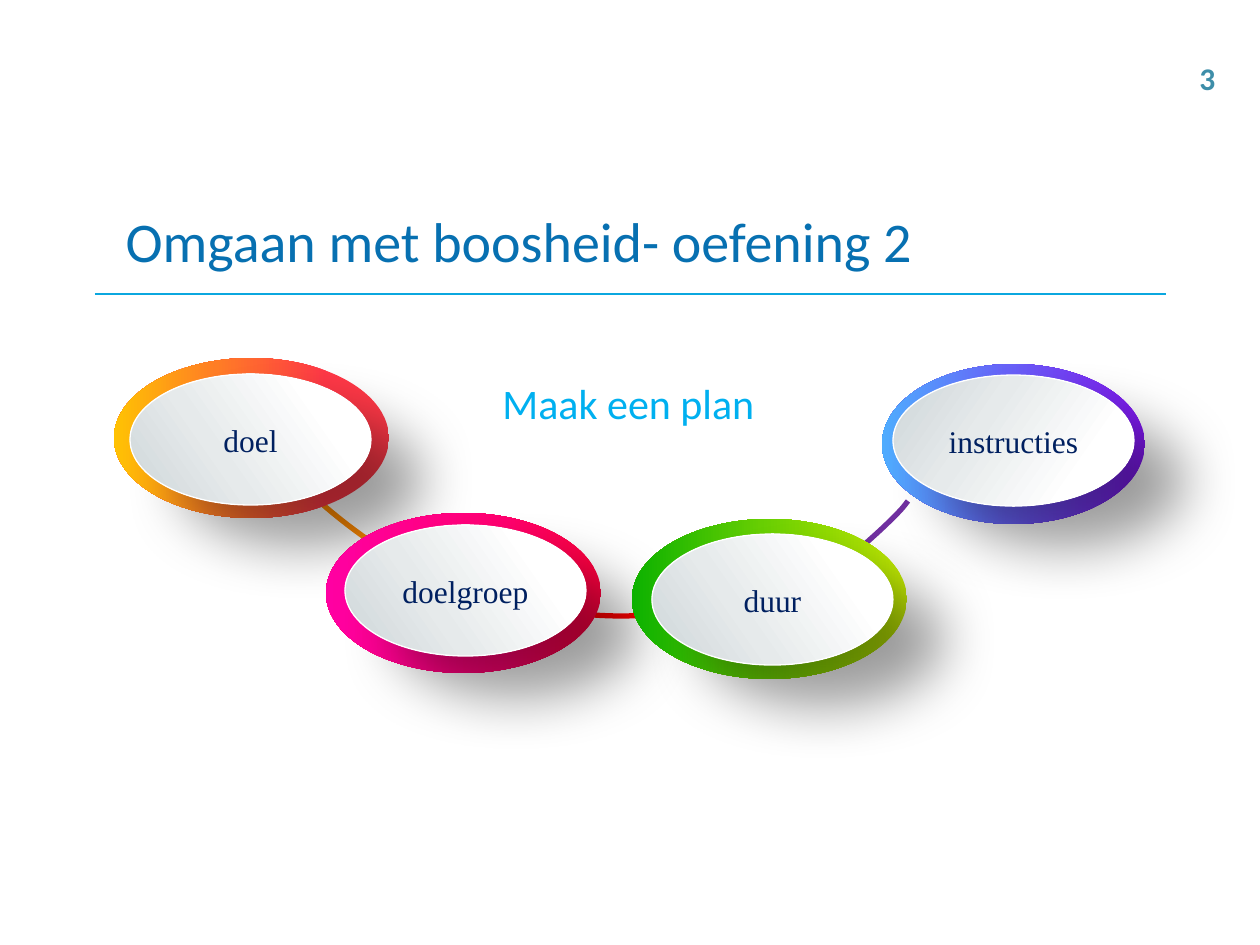
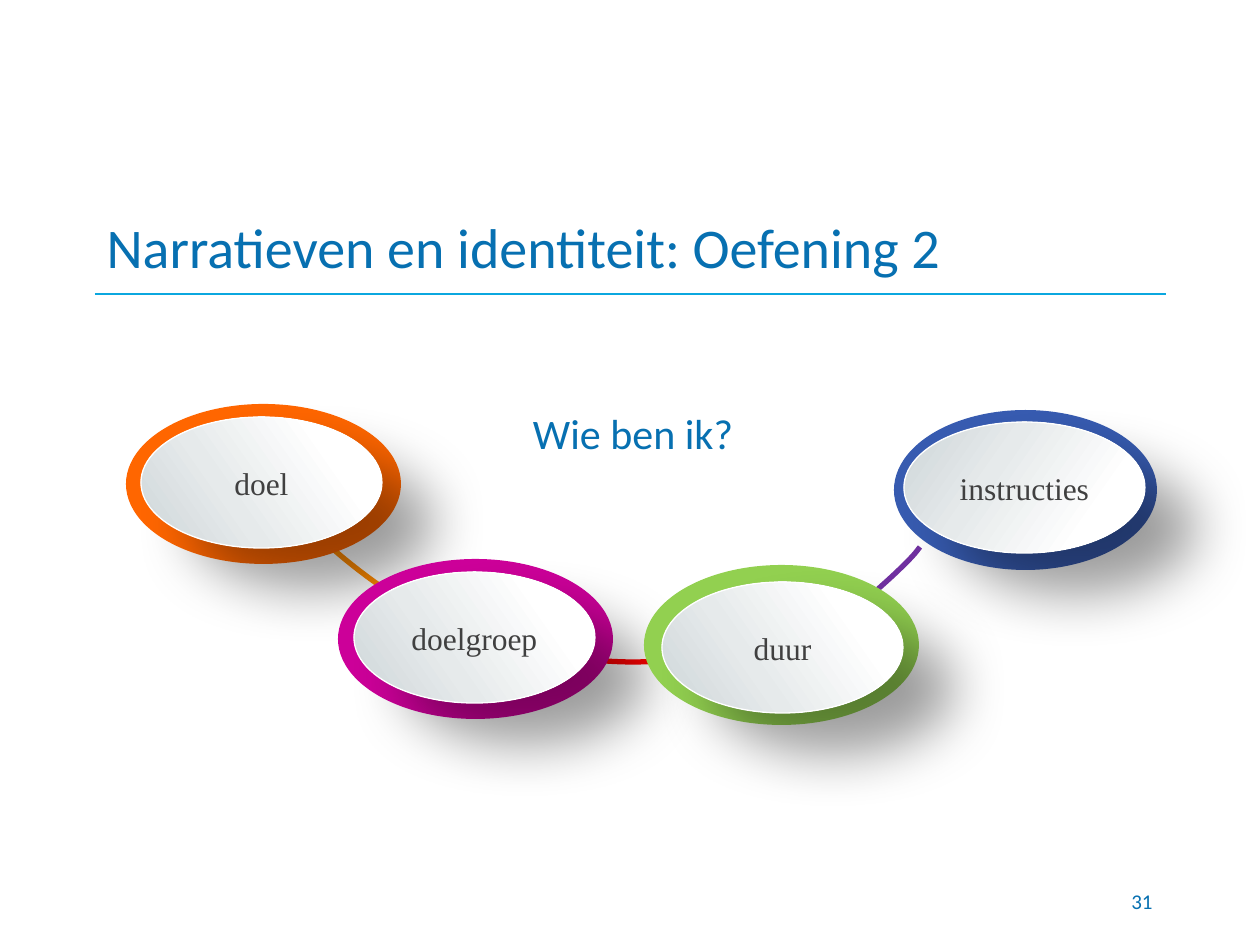
from pptx import Presentation
from pptx.dml.color import RGBColor
from pptx.enum.shapes import MSO_CONNECTOR, MSO_SHAPE
from pptx.enum.text import MSO_ANCHOR, MSO_AUTO_SIZE, PP_ALIGN
from pptx.oxml import parse_xml
from pptx.oxml.ns import nsdecls
from pptx.oxml.xmlchemy import OxmlElement
from pptx.util import Pt

EMU_PER_PX = 914400 / 126
SANS, SERIF = "Calibri", "Times New Roman"
BLUE, RULE_BLUE, SKY, TEAL = "0770B1", "0BA7DF", "00B0F0", "3E8EA9"
NAVY, GREY = "002060", "404040"
WHITE, BLACK = "FFFFFF", "000000"
PURPLE, RED, ORANGE = "7030A0", "FF0000", "FF8A00"

SILVER = [(0, "CDD5D8"), (37, "E6EAEB"), (77, WHITE), (100, WHITE)]
FACE_SIZE = (241, 131)
# label, ring box within the chain, gradient angle of the face
OVALS = [
    ("instructies", (768, 6, 263, 160), 35),
    ("doel", (0, 0, 275, 160), 325),
    ("doelgroep", (212, 155, 275, 160), 325),
    ("duur", (518, 161, 275, 160), 325),
]
# colour, start point and cubic segments within the chain
ARCS = [
    (PURPLE, [(794, 143), (789, 150), (784, 155), (779, 160),
              (763, 176), (745, 191), (729, 206),
              (705, 222), (681, 234), (656, 243)]),
    (RED, [(452, 254), (479, 258), (507, 259), (535, 257),
           (549, 256), (562, 254), (576, 253)]),
    (ORANGE, [(197, 136), (224, 161), (256, 185), (292, 206)]),
]


def px(length):
    return round(length * EMU_PER_PX)


def px_box(*lengths):
    return [px(length) for length in lengths]


def color(hex_string):
    return RGBColor.from_string(hex_string)


def style_text(text_frame, text, size, hex_color, font=SANS,
               align=PP_ALIGN.LEFT, bold=False):
    text_frame.text = text
    paragraph = text_frame.paragraphs[0]
    paragraph.alignment = align
    run_font = paragraph.runs[0].font
    run_font.name, run_font.size, run_font.bold = font, Pt(size), bold
    run_font.color.rgb = color(hex_color)
    return paragraph


def add_text(slide, box, text, size, hex_color, wrap=True, **style):
    text_frame = slide.shapes.add_textbox(*px_box(*box)).text_frame
    text_frame.word_wrap = wrap
    return text_frame, style_text(text_frame, text, size, hex_color, **style)


def fill_gradient(shape, stops, angle):
    stop_xml = "".join(
        f'<a:gs pos="{position * 1000}"><a:srgbClr val="{hex_color}"/></a:gs>'
        for position, hex_color in stops)
    gradient = parse_xml(
        f'<a:gradFill {nsdecls("a")} rotWithShape="1"><a:gsLst>{stop_xml}</a:gsLst>'
        f'<a:lin ang="{angle * 60000}" scaled="0"/></a:gradFill>')
    shape.element.spPr.find(".//{*}prstGeom").addnext(gradient)


def cast_shadow(shape):
    shape.shadow.inherit = False
    shape.element.spPr.find("{*}effectLst").append(parse_xml(
        f'<a:outerShdw {nsdecls("a")} blurRad="{Pt(33)}" dist="{Pt(36.7)}" '
        f'dir="{39 * 60000}" algn="tl" rotWithShape="0"><a:srgbClr val="{BLACK}">'
        '<a:alpha val="38000"/></a:srgbClr></a:outerShdw>'))


def add_title(slide, box, text):
    title = slide.shapes.title
    title.left, title.top, title.width, title.height = px_box(*box)
    title.text_frame.vertical_anchor = MSO_ANCHOR.MIDDLE
    title.text_frame.auto_size = MSO_AUTO_SIZE.NONE
    style_text(title.text_frame, text, 32, BLUE)
    rule = slide.shapes.add_connector(
        MSO_CONNECTOR.STRAIGHT, *px_box(95, 294, 1166, 294))
    rule.line.color.rgb = color(RULE_BLUE)
    rule.line.width = Pt(0.75)
    rule.element.spPr.append(OxmlElement("a:effectLst"))


def add_caption(slide, box, text, hex_color):
    _, paragraph = add_text(slide, box, text, 24, hex_color, align=PP_ALIGN.CENTER)
    paragraph.line_spacing = 1.15
    paragraph.space_after = Pt(6)


def curve_points(controls, steps=12):
    """Sample a chain of cubic Bézier segments, as EMU points."""
    points = [px_box(*controls[0])]
    for first in range(0, len(controls) - 1, 3):
        segment = controls[first:first + 4]
        for step in range(1, steps + 1):
            t = step / steps
            weights = ((1 - t) ** 3, 3 * t * (1 - t) ** 2, 3 * t * t * (1 - t), t ** 3)
            points.append([px(sum(weight * point[axis]
                                  for weight, point in zip(weights, segment)))
                           for axis in (0, 1)])
    return points


def add_arc(slide, left, top, hex_color, controls):
    start, *rest = curve_points(controls)
    builder = slide.shapes.build_freeform(*start)
    builder.add_line_segments(rest, close=False)
    arc = builder.convert_to_shape(px(left), px(top))
    arc.fill.background()
    arc.line.color.rgb = color(hex_color)
    arc.line.width = Pt(3)
    arc.shadow.inherit = False


def add_oval(slide, box, inset, label, ring_fill, face_angle, text_color):
    """Draw a coloured ring with a silver, labelled face on top."""
    ring = slide.shapes.add_shape(MSO_SHAPE.OVAL, *px_box(*box))
    ring.shadow.inherit = False
    ring.line.fill.background()
    if isinstance(ring_fill, str):
        ring.fill.solid()
        ring.fill.fore_color.rgb = color(ring_fill)
    else:
        fill_gradient(ring, ring_fill, 180)

    face_box = (box[0] + inset[0], box[1] + inset[1], *FACE_SIZE)
    face = slide.shapes.add_shape(MSO_SHAPE.OVAL, *px_box(*face_box))
    fill_gradient(face, SILVER, face_angle)
    face.line.color.rgb = color(WHITE)
    face.line.width = Pt(0.75)
    cast_shadow(face)
    text_frame = face.text_frame
    text_frame.margin_left = text_frame.margin_right = 0
    text_frame.margin_top = text_frame.margin_bottom = 0
    text_frame.vertical_anchor = MSO_ANCHOR.MIDDLE
    style_text(text_frame, label, 18, text_color, SERIF, PP_ALIGN.CENTER)


def add_chain(slide, left, top, rings, text_color):
    """Draw the linked ovals; rings maps a label to its fill and face inset."""
    for hex_color, controls in ARCS:
        add_arc(slide, left, top, hex_color, controls)
    for label, (x, y, width, height), face_angle in OVALS:
        ring_fill, inset = rings[label]
        add_oval(slide, (left + x, top + y, width, height), inset, label,
                 ring_fill, face_angle, text_color)


def add_anger_slide(slide):
    add_title(slide, (113, 193, 1071, 94), "Omgaan met boosheid- oefening 2")
    add_chain(slide, 114, 358, {
        "instructies": ([(0, "8016EF"), (52, "6761F7"), (100, "4FACFE")], (11, 11)),
        "doel": ([(0, "FF3847"), (23, "FF3847"), (63, "FF7D25"), (100, "FFC203")],
                 (16, 16)),
        "doelgroep": ([(0, "FF0040"), (2, "FF0040"), (37, "FF0071"), (100, "FF00A2")],
                      (19, 12)),
        "duur": ([(1, "C3EA03"), (53, "67CE02"), (100, "0CB100")], (20, 15)),
    }, NAVY)
    add_caption(slide, (401, 364, 455, 68), "Maak een plan", SKY)
    add_text(slide, (1187, 53, 42, 50), "3", 18, TEAL, wrap=False, bold=True)


def add_identity_slide(slide):
    add_title(slide, (94, 199, 1071, 94), "Narratieven en identiteit: Oefening 2")
    add_chain(slide, 126, 404, {
        "instructies": ("375BB0", (10, 12)),
        "doel": ("FF6600", (15, 13)),
        "doelgroep": ("CC0099", (16, 13)),
        "duur": ("92D050", (18, 17)),
    }, GREY)
    add_caption(slide, (326, 394, 614, 68), "Wie ben ik?", BLUE)
    number_frame, _ = add_text(slide, (903, 876, 262, 50), "31", 12, BLUE,
                               align=PP_ALIGN.RIGHT)
    number_frame.vertical_anchor = MSO_ANCHOR.MIDDLE


def main():
    presentation = Presentation()
    presentation.slide_width, presentation.slide_height = px_box(1260, 945)
    title_only = presentation.slide_layouts[5]
    for fill_slide in (add_anger_slide, add_identity_slide):
        fill_slide(presentation.slides.add_slide(title_only))
    presentation.save("out.pptx")


if __name__ == "__main__":
    main()
